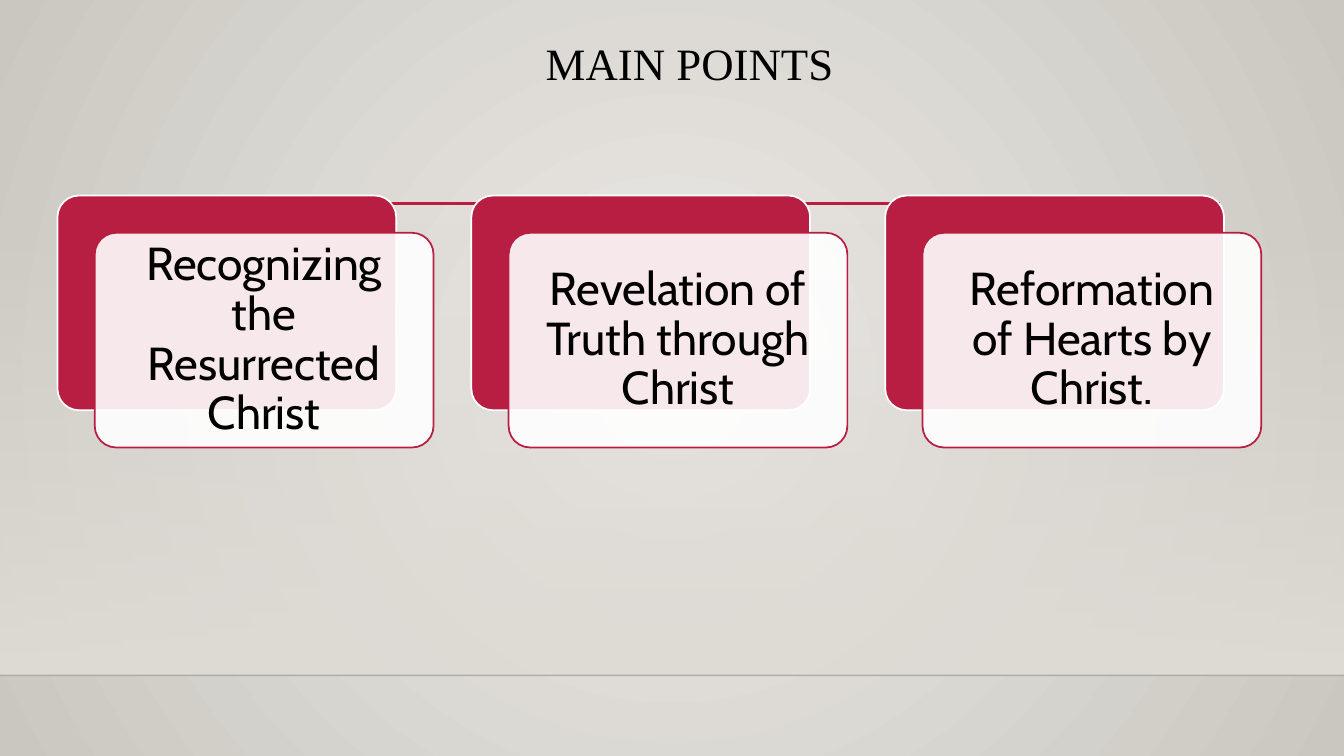
from pptx import Presentation
from pptx.dml.color import RGBColor
from pptx.enum.shapes import MSO_CONNECTOR, MSO_SHAPE
from pptx.enum.text import MSO_ANCHOR, PP_ALIGN
from pptx.oxml import parse_xml
from pptx.oxml.ns import nsdecls, qn
from pptx.oxml.xmlchemy import OxmlElement
from pptx.util import Inches, Pt

WIDE, HIGH = 13.33, 7.5
COLORS = {
    "red": "B71E42", "white": "FFFFFF", "black": "000000", "rule": "000001",
    "light": "ECEAE7", "dark": "CAC7C1", "floor": "DFDBD5",
}
TITLE = {"size": Pt(32), "name": "Times New Roman"}
BODY = {"size": Pt(33), "name": "Cabin"}
POINTS = [
    "Recognizing the Resurrected Christ",
    "Revelation of Truth through Christ",
    "Reformation of Hearts by Christ.",
]


def color(name):
    return RGBColor.from_string(COLORS[name])


def fade(root, alpha):
    """Set the opacity, in percent, of the first solid fill in root."""
    tint = root.find(".//" + qn("a:solidFill"))[0]
    node = OxmlElement("a:alpha")
    node.set("val", str(alpha * 1000))
    tint.append(node)


def blend(root, stops, shade):
    """Swap the first solid fill in root for a gradient."""
    marks = "".join(
        f'<a:gs pos="{pos * 1000}"><a:srgbClr val="{COLORS[name]}">'
        f'<a:alpha val="{alpha * 1000}"/></a:srgbClr></a:gs>'
        for pos, name, alpha in stops)
    solid = root.find(".//" + qn("a:solidFill"))
    solid.getparent().replace(solid, parse_xml(
        f'<a:gradFill {nsdecls("a")} rotWithShape="1">'
        f"<a:gsLst>{marks}</a:gsLst>{shade}</a:gradFill>"))


def write(frame, text, style):
    frame.word_wrap = True
    para = frame.paragraphs[0]
    para.alignment = PP_ALIGN.CENTER
    para.line_spacing = 0.9
    run = para.add_run()
    run.text = text
    for key, value in style.items():
        setattr(run.font, key, value)
    run.font.color.rgb = color("black")


def add_rule(slide, left, right, y, name, width):
    line = slide.shapes.add_connector(
        MSO_CONNECTOR.STRAIGHT, *map(Inches, (left, y, right, y)))
    line.line.color.rgb = color(name)
    line.line.width = Pt(width)
    line.element.spPr.append(OxmlElement("a:effectLst"))
    return line


def add_box(slide, kind, box, fill):
    shape = slide.shapes.add_shape(kind, *map(Inches, box))
    shape.shadow.inherit = False
    shape.fill.solid()
    shape.fill.fore_color.rgb = color(fill)
    return shape


def add_back(slide, top, base):
    # Round glow behind the whole slide
    slide.background.fill.solid()
    blend(slide.element.find(".//" + qn("p:bgPr")),
          [(0, "light", 100), (100, "dark", 100)],
          '<a:path path="circle"><a:fillToRect l="50000" t="50000" '
          'r="50000" b="50000"/></a:path>')
    # Floor that fades in down to its edge
    floor = add_box(slide, MSO_SHAPE.RECTANGLE,
                    (0, top, WIDE, base - top), "floor")
    floor.line.fill.background()
    blend(floor.element, [(0, "floor", 0), (100, "floor", 100)],
          '<a:lin ang="5400000" scaled="0"/>')
    edge = add_rule(slide, 0, WIDE, base, "rule", 1)
    fade(edge.element, 20)


def add_title(slide, box):
    title = slide.shapes.add_textbox(*map(Inches, box))
    write(title.text_frame, "MAIN POINTS", TITLE)


def add_card(slide, box, text):
    left, top, width, height = box
    shift = 0.37
    for step, fill, line in ((0, "red", "white"), (shift, "white", "red")):
        card = add_box(slide, MSO_SHAPE.ROUNDED_RECTANGLE,
                       (left + step, top + step, width, height), fill)
        card.adjustments[0] = 0.1
        card.line.color.rgb = color(line)
        card.line.width = Pt(1.25)
    # The front card is see-through and holds the text
    fade(card.element, 90)
    frame = card.text_frame
    frame.vertical_anchor = MSO_ANCHOR.MIDDLE
    for side in ("left", "top", "right", "bottom"):
        setattr(frame, f"margin_{side}", Inches(0.2))
    write(frame, text, BODY)


def add_cards(slide, box):
    left, top, width, height = box
    pitch = 4.105
    for i, text in enumerate(POINTS):
        add_card(slide, (left + i * pitch, top, width, height), text)


def main():
    deck = Presentation()
    deck.slide_width, deck.slide_height = Inches(WIDE), Inches(HIGH)
    slide = deck.slides.add_slide(deck.slide_layouts[6])
    add_back(slide, 2.21, 6.7)
    add_rule(slide, 1.59, 12.1, 2.02, "red", 2.5)
    add_title(slide, (1.59, 0.37, 10.5, 1.15))
    add_cards(slide, (0.57, 1.94, 3.36, 2.13))
    deck.save("out.pptx")


if __name__ == "__main__":
    main()
